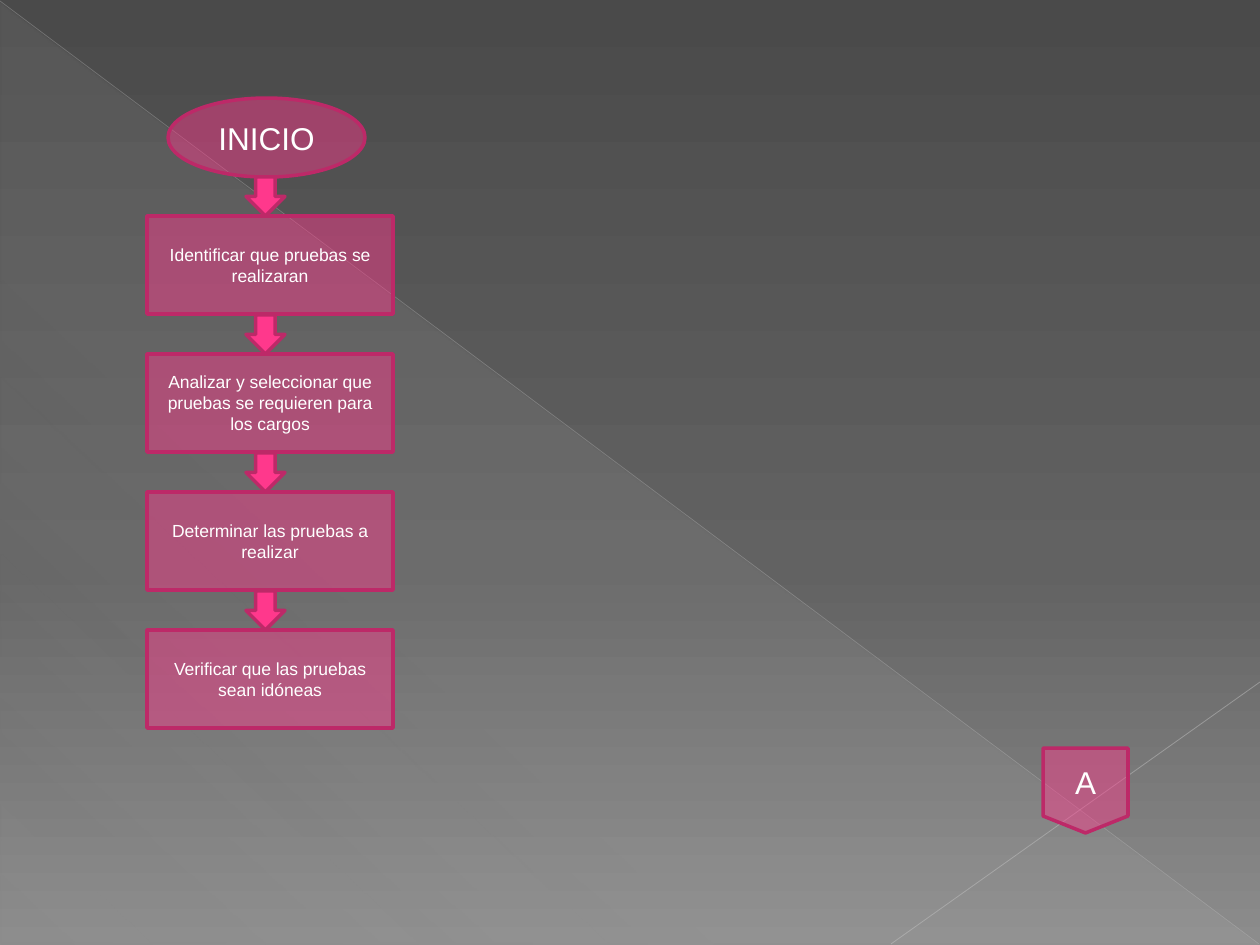
from lxml import etree
from pptx import Presentation
from pptx.dml.color import RGBColor
from pptx.enum.shapes import MSO_CONNECTOR, MSO_SHAPE
from pptx.enum.text import MSO_ANCHOR, PP_ALIGN
from pptx.oxml.ns import qn
from pptx.util import Pt

PX = 914400 / 126
LINE = MSO_CONNECTOR.STRAIGHT
TRIANGLE = MSO_SHAPE.RIGHT_TRIANGLE
START = MSO_SHAPE.FLOWCHART_CONNECTOR
PROCESS = MSO_SHAPE.FLOWCHART_PROCESS
OFFPAGE = MSO_SHAPE.FLOWCHART_OFFPAGE_CONNECTOR
ARROW = MSO_SHAPE.DOWN_ARROW
CENTER = PP_ALIGN.CENTER
MIDDLE = MSO_ANCHOR.MIDDLE

COLORS = {
    "pink": "FF388C", "border": "BD2968", "text": "FFFFFF",
    "top": "4A4A4A", "middle": "626262", "bottom": "8C8C8C",
    "sheen": "D2D2D2", "diagonal": "BFBFBF", "corner": "C6C6C6",
}
STEPS = [
    "Identificar que pruebas se realizaran",
    "Analizar y seleccionar que pruebas se requieren para los cargos",
    "Determinar las pruebas a realizar",
    "Verificar que las pruebas sean idóneas",
]
STEP_TOP, STEP_PITCH, ARROW_SIZE = 216, 138, 39


def set_gradient(fill, element, angle, stops):
    """Fill with stops of (position %, colour name, opacity %); angle is clockwise."""
    fill.gradient()
    fill.gradient_angle = 360 - angle
    gs_list = next(element.iter(qn("a:gsLst")))
    for gs in list(gs_list):
        gs_list.remove(gs)
    for position, color, opacity in stops:
        gs = etree.SubElement(gs_list, qn("a:gs"), pos=str(position * 1000))
        clr = etree.SubElement(gs, qn("a:srgbClr"), val=COLORS[color])
        etree.SubElement(clr, qn("a:alpha"), val=str(opacity * 1000))


def add_node(kind, x, y, w, h, text="", size=10):
    """Add a pink flowchart shape; one with text is see-through."""
    sp = s.shapes.add_shape(kind, *(round(v * PX) for v in (x, y, w, h)))
    sp.shadow.inherit = False
    sp.fill.solid()
    sp.fill.fore_color.rgb = RGBColor.from_string(COLORS["pink"])
    sp.line.color.rgb = RGBColor.from_string(COLORS["border"])
    sp.line.width = Pt(2)
    if text:
        clr = next(sp._element.spPr.iter(qn("a:srgbClr")))
        etree.SubElement(clr, qn("a:alpha"), val="46000")
        tf = sp.text_frame
        tf.word_wrap = True
        tf.vertical_anchor = MIDDLE
        p = tf.paragraphs[0]
        p.text = text
        p.alignment = CENTER
        p.font.name = "Arial"
        p.font.size = Pt(size)
        p.font.color.rgb = RGBColor.from_string(COLORS["text"])


prs = Presentation()
prs.slide_width, prs.slide_height = round(1260 * PX), round(945 * PX)
s = prs.slides.add_slide(prs.slide_layouts[6])

# Backdrop
set_gradient(s.background.fill, s._element, 90,
             [(0, "top", 100), (60, "middle", 100), (100, "bottom", 100)])
triangle = s.shapes.add_shape(TRIANGLE, *(round(v * PX) for v in (1, 3, 1258, 942)))
triangle.shadow.inherit = False
triangle.line.fill.background()
set_gradient(triangle.fill, triangle._element.spPr, 133,
             [(0, "sheen", 10), (70, "sheen", 8), (100, "sheen", 1)])

for ends, color, width, opacity in [
    ((0, 1, 1259, 944), "diagonal", 0.39, 35),
    ((1260, 682, 891, 944), "corner", 0.47, 45),
]:
    line = s.shapes.add_connector(LINE, *(round(v * PX) for v in ends))
    line.line.color.rgb = RGBColor.from_string(COLORS[color])
    line.line.width = Pt(width)
    sp_pr = line._element.spPr
    clr = next(sp_pr.iter(qn("a:srgbClr")))
    etree.SubElement(clr, qn("a:alpha"), val=str(opacity * 1000))
    etree.SubElement(sp_pr, qn("a:effectLst"))

# Flowchart
add_node(START, 168, 98, 197, 79, "INICIO", 18)
for i, step in enumerate(STEPS):
    y = STEP_TOP + i * STEP_PITCH
    add_node(ARROW, 246, y - ARROW_SIZE, ARROW_SIZE, ARROW_SIZE)
    add_node(PROCESS, 147, y, 246, 98, step)
add_node(OFFPAGE, 1043, 748, 85, 85, "A", 18)

prs.save("out.pptx")
